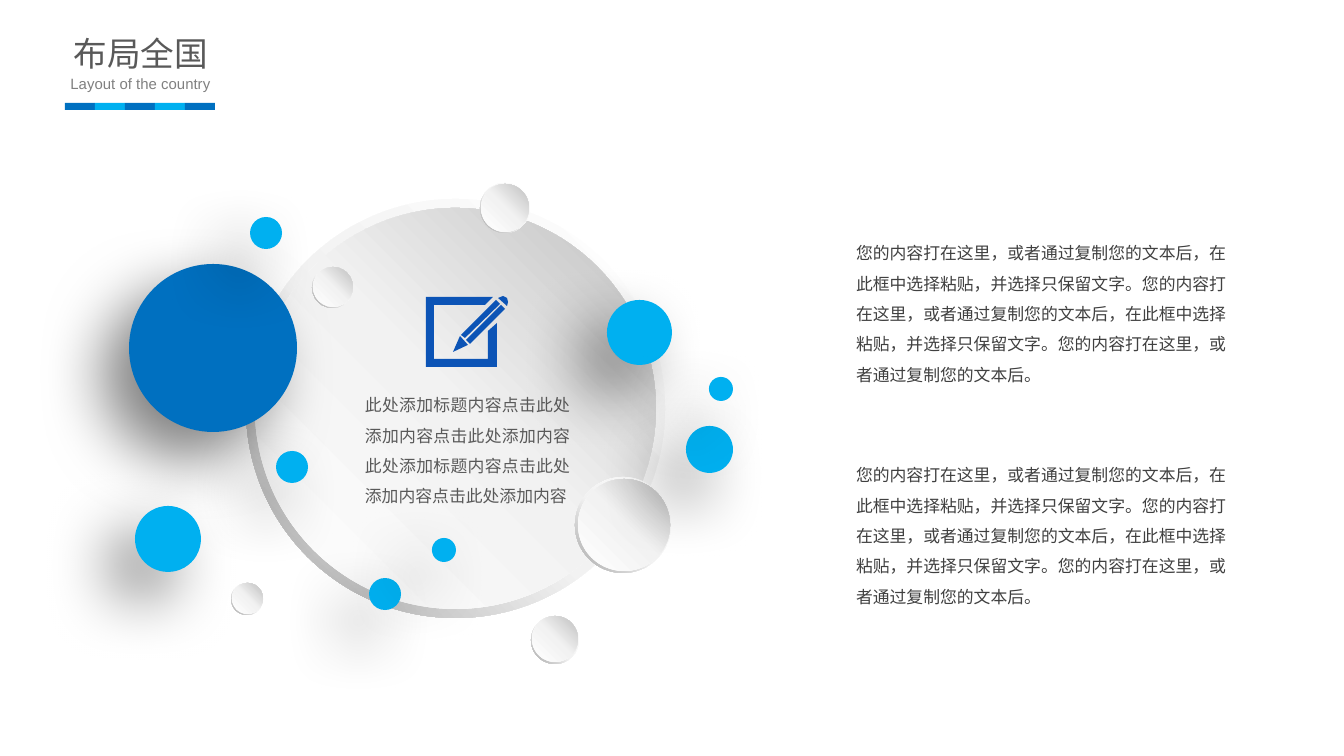
from dataclasses import dataclass
from typing import Optional

from lxml.etree import SubElement
from pptx import Presentation
from pptx.dml.color import RGBColor
from pptx.enum.shapes import MSO_SHAPE
from pptx.enum.text import MSO_AUTO_SIZE, PP_ALIGN
from pptx.oxml.ns import qn
from pptx.util import Emu, Pt

EMU_PER_PX = 914400 / 134.4

BLUE = RGBColor(0x00, 0x70, 0xC0)
SKY = RGBColor(0x00, 0xB0, 0xF0)
ICON_BLUE = RGBColor(0x0C, 0x54, 0xB6)
BODY_GREY = RGBColor(0x40, 0x40, 0x40)
TITLE_GREY = RGBColor(0x59, 0x59, 0x59)
SUBTITLE_GREY = RGBColor(0x80, 0x80, 0x80)
WHITE = RGBColor(0xFF, 0xFF, 0xFF)
PALE = RGBColor(0xF2, 0xF2, 0xF2)
SILVER = RGBColor(0xBF, 0xBF, 0xBF)
STEEL = RGBColor(0xA6, 0xA6, 0xA6)


@dataclass(frozen=True)
class Gradient:
    stops: tuple[tuple[int, RGBColor], ...]
    angle: int


@dataclass(frozen=True)
class Circle:
    left: int
    top: int
    size: int
    color: RGBColor = WHITE


@dataclass(frozen=True)
class Disc:
    rim: Circle
    face: Circle


@dataclass(frozen=True)
class Label:
    text: str
    left: int
    top: int
    width: int
    height: int
    size: int
    color: RGBColor
    align: Optional[PP_ALIGN] = None
    spacing: Optional[float] = None
    wrap: bool = True
    inset_x: int = 13
    inset_y: int = 7


RIM = Gradient(((0, WHITE), (55, PALE), (100, STEEL)), 135)
FACE = Gradient(((0, WHITE), (51, PALE), (100, SILVER)), 315)

BODY = (
    "您的内容打在这里，或者通过复制您的文本后，在此框中选择粘贴，并选择只保留文字。"
    "您的内容打在这里，或者通过复制您的文本后，在此框中选择粘贴，并选择只保留文字。"
    "您的内容打在这里，或者通过复制您的文本后。"
)
CAPTION = "此处添加标题内容点击此处添加内容点击此处添加内容" * 2

BODY_LABELS = [
    Label(BODY, 843, top, 397, 167, 9, BODY_GREY, spacing=1.5) for top in (226, 448)
]
TITLE_LABELS = [
    Label("布局全国", 63, 28, 156, 51, 18, TITLE_GREY, PP_ALIGN.CENTER,
          wrap=False, inset_x=9, inset_y=5),
    Label("Layout of the country", 11, 68, 259, 32, 8, SUBTITLE_GREY, PP_ALIGN.CENTER),
]
CAPTION_LABEL = Label(
    CAPTION, 352, 378, 231, 136, 9, TITLE_GREY, PP_ALIGN.JUSTIFY, spacing=1.5
)

GREY_DISCS = [
    Disc(Circle(246, 199, 419), Circle(255, 208, 401)),
    Disc(Circle(575, 477, 96), Circle(578, 479, 92)),
    Disc(Circle(312, 267, 41), Circle(313, 267, 40)),
    Disc(Circle(531, 616, 48), Circle(532, 616, 46)),
    Disc(Circle(480, 183, 50), Circle(481, 184, 48)),
    Disc(Circle(231, 583, 32), Circle(232, 583, 31)),
]
COLOR_BALLS = [
    Circle(129, 264, 168, BLUE),
    Circle(135, 506, 66, SKY),
    Circle(276, 451, 32, SKY),
    Circle(250, 217, 32, SKY),
    Circle(369, 578, 32, SKY),
    Circle(432, 538, 24, SKY),
    Circle(607, 300, 65, SKY),
    Circle(686, 426, 47, SKY),
    Circle(709, 377, 24, SKY),
]

PENCIL_PARTS = [
    # nib, upper edge, lower edge, cap, frame
    [(468, 345), (460, 336), (453, 352)],
    [(496, 300), (461, 335), (465, 338), (500, 304)],
    [(466, 340), (470, 344), (505, 309), (501, 305)],
    [(507, 298), (503, 296), (498, 298), (507, 306), (508, 302)],
    [(488, 359), (434, 359), (434, 305), (485, 305), (493, 297),
     (426, 297), (426, 367), (497, 367), (497, 323), (488, 331)],
]


def px(value: int) -> Emu:
    return Emu(round(value * EMU_PER_PX))


def finish(shape, color: RGBColor) -> None:
    shape.shadow.inherit = False
    shape.fill.solid()
    shape.fill.fore_color.rgb = color
    shape.line.fill.background()


def add_label(shapes, label: Label) -> None:
    box = shapes.add_textbox(
        px(label.left), px(label.top), px(label.width), px(label.height)
    )
    frame = box.text_frame
    frame.word_wrap = label.wrap
    frame.auto_size = MSO_AUTO_SIZE.SHAPE_TO_FIT_TEXT
    frame.margin_left = frame.margin_right = px(label.inset_x)
    frame.margin_top = frame.margin_bottom = px(label.inset_y)
    para = frame.paragraphs[0]
    para.alignment = label.align
    para.line_spacing = label.spacing
    span = para.add_run()
    span.text = label.text
    span.font.name = "Arial"
    span.font.size = Pt(label.size)
    span.font.color.rgb = label.color


def add_circle(shapes, circle: Circle, kind=MSO_SHAPE.OVAL):
    size = px(circle.size)
    shape = shapes.add_shape(kind, px(circle.left), px(circle.top), size, size)
    finish(shape, circle.color)
    return shape


def set_gradient(shape, gradient: Gradient) -> None:
    properties = shape._element.spPr
    solid = properties.find(qn("a:solidFill"))
    fill = properties.makeelement(qn("a:gradFill"), {"rotWithShape": "1"})
    stops = SubElement(fill, qn("a:gsLst"))
    for position, color in gradient.stops:
        stop = SubElement(stops, qn("a:gs"), pos=str(position * 1000))
        SubElement(stop, qn("a:srgbClr"), val=str(color))
    SubElement(fill, qn("a:lin"), ang=str(gradient.angle * 60000), scaled="0")
    properties.replace(solid, fill)


def set_soft_shadow(shape) -> None:
    effects = shape._element.spPr.find(qn("a:effectLst"))
    shadow = SubElement(
        effects, qn("a:outerShdw"), blurRad=str(Pt(35)), dist=str(Pt(20)),
        dir=str(135 * 60000), algn="tr", rotWithShape="0",
    )
    color = SubElement(shadow, qn("a:srgbClr"), val="000000")
    SubElement(color, qn("a:alpha"), val="50000")


def add_disc(page, disc: Disc) -> None:
    shapes = page.shapes.add_group_shape().shapes
    rim = add_circle(shapes, disc.rim, MSO_SHAPE.DONUT)
    rim.adjustments[0] = 0.049
    set_gradient(rim, RIM)
    set_gradient(add_circle(shapes, disc.face), FACE)


def add_pencil_icon(page) -> None:
    shapes = page.shapes.add_group_shape().shapes
    for points in PENCIL_PARTS:
        builder = shapes.build_freeform(*points[0], scale=EMU_PER_PX)
        builder.add_line_segments(points[1:], close=True)
        finish(builder.convert_to_shape(), ICON_BLUE)


def add_heading(page) -> None:
    shapes = page.shapes.add_group_shape().shapes
    for label in TITLE_LABELS:
        add_label(shapes, label)
    for index in range(5):
        bar = shapes.add_shape(
            MSO_SHAPE.RECTANGLE, px(65 + 30 * index), px(103), px(30), px(7)
        )
        finish(bar, SKY if index % 2 else BLUE)


def main() -> None:
    deck = Presentation()
    deck.slide_width, deck.slide_height = px(1344), px(756)
    page = deck.slides.add_slide(deck.slide_layouts[6])

    # Body text and heading
    for label in BODY_LABELS:
        add_label(page.shapes, label)
    add_heading(page)

    # Grey discs, icon and caption, then the coloured balls
    for disc in GREY_DISCS:
        add_disc(page, disc)
    add_pencil_icon(page)
    add_label(page.shapes, CAPTION_LABEL)
    for ball in COLOR_BALLS:
        set_soft_shadow(add_circle(page.shapes, ball))

    deck.save("out.pptx")


if __name__ == "__main__":
    main()
